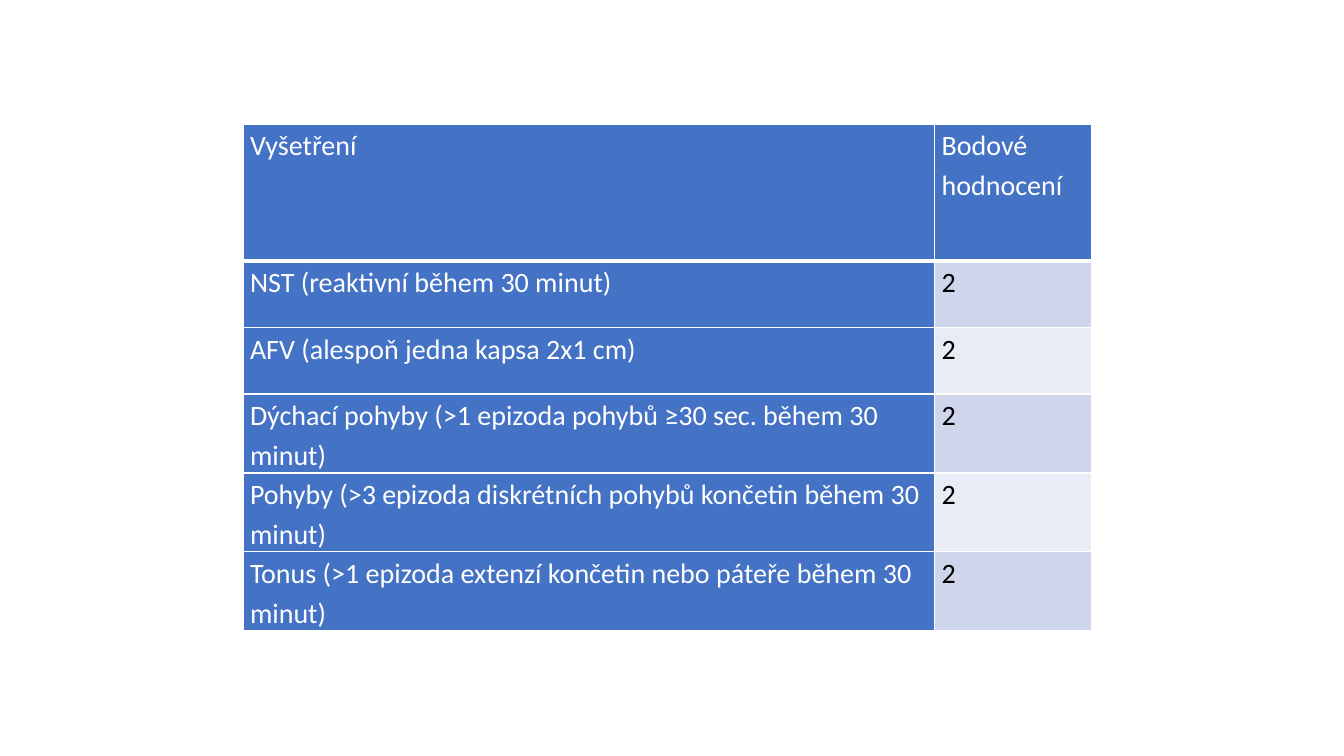
from dataclasses import dataclass

from lxml import etree
from pptx import Presentation, util as u
from pptx.dml.color import RGBColor
from pptx.oxml import ns


@dataclass(frozen=True)
class Theme:
    font: str = "Calibri"
    size: int = 20
    lead: float = 1.15
    head: str = "4472C4"
    bands: tuple = ("CFD5EA", "E9EBF5")
    light: str = "FFFFFF"
    dark: str = "000000"
    thin: int = 1
    thick: int = 3
    inset: float = 0.07


def write(frame, words, font, size, color, lead):
    para = frame.paragraphs[0]
    para.line_spacing = lead
    run = para.add_run()
    run.text = words
    run.font.name = font
    run.font.size = u.Pt(size)
    run.font.bold = False
    run.font.color.rgb = RGBColor.from_string(color)


def edge(cell, sides, color):
    """Draw cell borders; sides maps L, R, T, B (in that order) to points."""
    props = cell._tc.get_or_add_tcPr()
    for spot, (side, width) in enumerate(sides.items()):
        line = etree.Element(ns.qn(f"a:ln{side}"), w=str(u.Pt(width)))
        fill = etree.SubElement(line, ns.qn("a:solidFill"))
        etree.SubElement(fill, ns.qn("a:srgbClr"), val=color)
        props.insert(spot, line)


class Deck:
    """Holds the theme and the current slide; lengths are shares of the slide."""

    def __init__(self, theme, wide=13.33, high=7.5):
        self.theme = theme
        self.file = Presentation()
        self.file.slide_width = u.Inches(wide)
        self.file.slide_height = u.Inches(high)
        self.slide = self.file.slides.add_slide(self.file.slide_layouts[6])

    def across(self, share):
        return round(self.file.slide_width * share)

    def down(self, share):
        return round(self.file.slide_height * share)

    def cell(self, cell, words, fill, color, base):
        look = self.theme
        cell.margin_left = cell.margin_right = u.Inches(look.inset)
        cell.margin_top = cell.margin_bottom = 0
        cell.fill.solid()
        cell.fill.fore_color.rgb = RGBColor.from_string(fill)
        edge(cell, dict(L=look.thin, R=look.thin, T=look.thin, B=base), look.light)
        write(cell.text_frame, words, font=look.font, size=look.size,
              color=color, lead=look.lead)

    def table(self, data, left, top, cols, rows):
        look = self.theme
        grid = self.slide.shapes.add_table(
            len(rows), len(cols), self.across(left), self.down(top),
            self.across(sum(cols)), self.down(sum(rows))).table
        for col, share in zip(grid.columns, cols):
            col.width = self.across(share)
        for row, share in zip(grid.rows, rows):
            row.height = self.down(share)
        for r, line in enumerate(data):
            for c, words in enumerate(line):
                blue = r == 0 or c == 0
                self.cell(grid.cell(r, c), words,
                          fill=look.head if blue else look.bands[(r - 1) % 2],
                          color=look.light if blue else look.dark,
                          base=look.thin if r else look.thick)


def main():
    tests = [
        "NST (reaktivní během 30 minut)",
        "AFV (alespoň jedna kapsa 2x1 cm)",
        "Dýchací pohyby (>1 epizoda pohybů ≥30 sec. během 30 minut)",
        "Pohyby (>3 epizoda diskrétních pohybů končetin během 30 minut)",
        "Tonus (>1 epizoda extenzí končetin nebo páteře během 30 minut)",
    ]
    data = [("Vyšetření", "Bodové hodnocení")] + [(test, "2") for test in tests]
    deck = Deck(Theme())
    deck.table(data, left=2.41 / 13.33, top=1.23 / 7.5,
               cols=[6.86 / 13.33, 1.56 / 13.33],
               rows=[1.36 / 7.5] + [0.66 / 7.5] * len(tests))
    deck.file.save("out.pptx")


if __name__ == "__main__":
    main()
